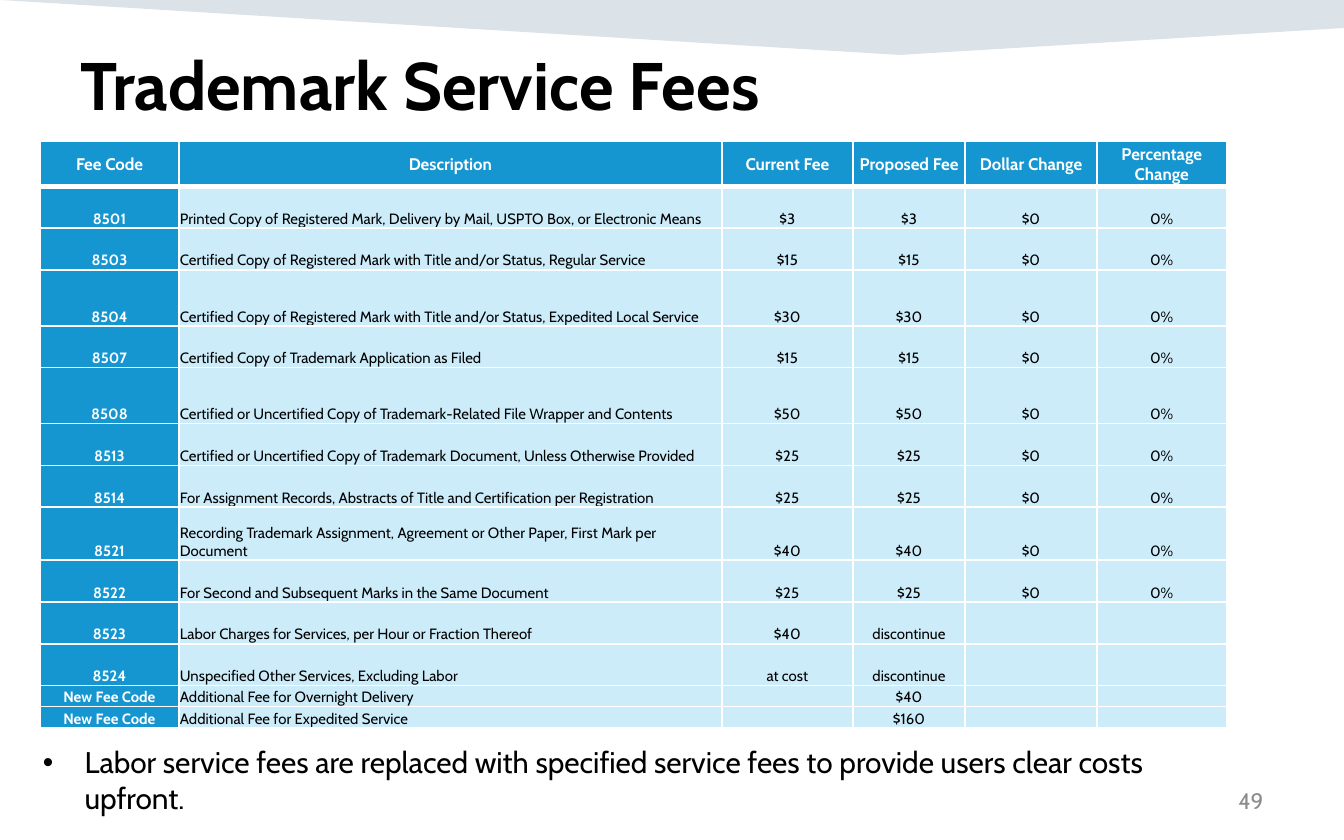
from lxml.etree import SubElement
from pptx import Presentation
from pptx.dml.color import RGBColor
from pptx.enum.text import MSO_ANCHOR, PP_ALIGN
from pptx.oxml.ns import qn
from pptx.util import Cm, Pt

FONT = "Cabin"
COLORS = {
    "black": "000000",
    "white": "FFFFFF",
    "gray": "8C8C8C",
    "navy": "164469",
    "blue": "1596D1",
    "pale": "CCECFA",
}

COLUMN_WIDTHS = [2.62, 10.26, 2.48, 2.12, 2.49, 2.45]
HEADINGS = ["Fee Code", "Description", "Current Fee", "Proposed Fee",
            "Dollar Change", "Percentage Change"]
HEADING_HEIGHT = 0.85

# Row heights in centimetres
LOW, NORMAL, WRAPPED, TALL = 0.4, 0.79, 1.0, 1.06
UNCHANGED = ["$0", "0%"]
NO_CHANGE = ["", ""]
FEES = [
    (NORMAL, "8501", "Printed Copy of Registered Mark, Delivery by Mail, USPTO Box, or Electronic Means",
     "$3", "$3", *UNCHANGED),
    (NORMAL, "8503", "Certified Copy of Registered Mark with Title and/or Status, Regular Service",
     "$15", "$15", *UNCHANGED),
    (TALL, "8504", "Certified Copy of Registered Mark with Title and/or Status, Expedited Local Service",
     "$30", "$30", *UNCHANGED),
    (NORMAL, "8507", "Certified Copy of Trademark Application as Filed",
     "$15", "$15", *UNCHANGED),
    (TALL, "8508", "Certified or Uncertified Copy of Trademark-Related File Wrapper and Contents",
     "$50", "$50", *UNCHANGED),
    (NORMAL, "8513", "Certified or Uncertified Copy of Trademark Document, Unless Otherwise Provided",
     "$25", "$25", *UNCHANGED),
    (NORMAL, "8514", "For Assignment Records, Abstracts of Title and Certification per Registration",
     "$25", "$25", *UNCHANGED),
    (WRAPPED, "8521", "Recording Trademark Assignment, Agreement or Other Paper, First Mark per Document",
     "$40", "$40", *UNCHANGED),
    (NORMAL, "8522", "For Second and Subsequent Marks in the Same Document",
     "$25", "$25", *UNCHANGED),
    (NORMAL, "8523", "Labor Charges for Services, per Hour or Fraction Thereof",
     "$40", "discontinue", *NO_CHANGE),
    (NORMAL, "8524", "Unspecified Other Services, Excluding Labor",
     "at cost", "discontinue", *NO_CHANGE),
    (LOW, "New Fee Code", "Additional Fee for Overnight Delivery", "", "$40", *NO_CHANGE),
    (LOW, "New Fee Code", "Additional Fee for Expedited Service", "", "$160", *NO_CHANGE),
]


def color(name):
    return RGBColor.from_string(COLORS[name])


def add_span(para, text, size, color_name, bold=False):
    span = para.add_run()
    span.text = text
    span.font.name = FONT
    span.font.size = Pt(size)
    span.font.bold = bold
    span.font.color.rgb = color(color_name)


def add_box(page, left, top, width, height, anchor=MSO_ANCHOR.TOP):
    """Add a wrapping text box and return its first paragraph."""
    box = page.shapes.add_textbox(Cm(left), Cm(top), Cm(width), Cm(height))
    box.text_frame.word_wrap = True
    box.text_frame.vertical_anchor = anchor
    return box.text_frame.paragraphs[0]


def add_bullet(para, indent):
    properties = para._p.get_or_add_pPr()
    properties.set("marL", str(Cm(indent)))
    properties.set("indent", str(-Cm(indent)))
    SubElement(properties, qn("a:buFont"), typeface="Arial")
    SubElement(properties, qn("a:buChar"), char="•")


def add_banner(page):
    builder = page.shapes.build_freeform(0, 0)
    corners = [(25.4, 0), (25.4, 0.53), (17, 1.04)]
    builder.add_line_segments([(Cm(x), Cm(y)) for x, y in corners], close=True)
    banner = builder.convert_to_shape()
    banner.shadow.inherit = False
    banner.line.fill.background()
    banner.fill.solid()
    banner.fill.fore_color.rgb = color("navy")
    tint = banner._element.spPr.find(".//" + qn("a:srgbClr"))
    SubElement(tint, qn("a:alpha"), val="15000")


def set_borders(cell, bottom):
    properties = cell._tc.get_or_add_tcPr()
    for side, width in (("L", 1), ("R", 1), ("T", 1), ("B", bottom)):
        line = SubElement(properties, qn(f"a:ln{side}"), w=str(Pt(width)))
        fill = SubElement(line, qn("a:solidFill"))
        SubElement(fill, qn("a:srgbClr"), val=COLORS["white"])


def fill_cell(cell, text, fill, size, text_color, bold, align, anchor, bottom=1):
    cell.margin_left = cell.margin_top = cell.margin_right = Cm(0.02)
    cell.margin_bottom = 0
    cell.vertical_anchor = anchor
    set_borders(cell, bottom)
    cell.fill.solid()
    cell.fill.fore_color.rgb = color(fill)
    para = cell.text_frame.paragraphs[0]
    para.alignment = align
    if text:
        add_span(para, text, size, text_color, bold)
    else:
        # A small end mark keeps empty cells from stretching low rows
        SubElement(para._p, qn("a:endParaRPr"), sz=str(size * 100))


def add_fee_table(page):
    heights = [HEADING_HEIGHT] + [fee[0] for fee in FEES]
    frame = page.shapes.add_table(len(heights), len(COLUMN_WIDTHS), Cm(0.76), Cm(2.67),
                                  Cm(sum(COLUMN_WIDTHS)), Cm(sum(heights)))
    table = frame.table
    for column, width in zip(table.columns, COLUMN_WIDTHS):
        column.width = Cm(width)
    for row, height in zip(table.rows, heights):
        row.height = Cm(height)

    # Heading row
    for cell, heading in zip(table.rows[0].cells, HEADINGS):
        fill_cell(cell, heading, "blue", 9, "white", True,
                  PP_ALIGN.CENTER, MSO_ANCHOR.MIDDLE, bottom=3)

    # Fee rows: the code column is blue, descriptions are left-aligned
    for row_index, (_, *values) in enumerate(FEES, start=1):
        for column_index, value in enumerate(values):
            is_code = column_index == 0
            fill_cell(table.cell(row_index, column_index), value,
                      "blue" if is_code else "pale", 8,
                      "white" if is_code else "black", is_code,
                      PP_ALIGN.LEFT if column_index == 1 else PP_ALIGN.CENTER,
                      MSO_ANCHOR.BOTTOM)


def main():
    deck = Presentation()
    deck.slide_width, deck.slide_height = Cm(25.4), Cm(15.88)
    page = deck.slides.add_slide(deck.slide_layouts[6])

    # Banner and title
    add_banner(page)
    title = add_box(page, 1.27, 0.69, 22.86, 2.46)
    add_span(title, "Trademark Service Fees", 36, "black", bold=True)

    # Page number
    number = add_box(page, 18.21, 14.71, 5.92, 0.84, MSO_ANCHOR.MIDDLE)
    number.alignment = PP_ALIGN.RIGHT
    add_span(number, "49", 12, "gray")

    # Fees and closing remark
    add_fee_table(page)
    remark = add_box(page, 0.56, 13.94, 23.14, 1.63)
    add_bullet(remark, 0.79)
    add_span(remark, "Labor service fees are replaced with specified service fees "
                     "to provide users clear costs upfront.", 16, "black")

    deck.save("out.pptx")


if __name__ == "__main__":
    main()
